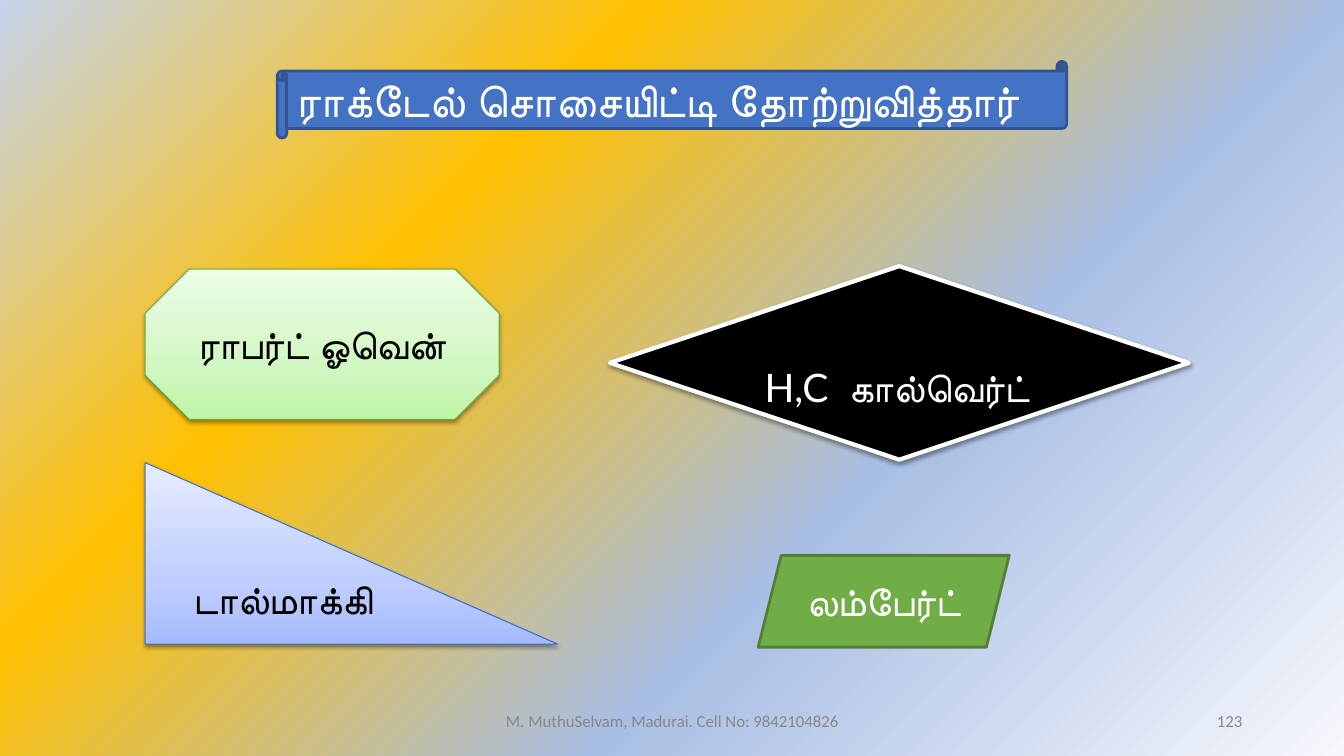
from lxml.etree import SubElement
from pptx import Presentation
from pptx.dml.color import RGBColor
from pptx.enum.shapes import MSO_SHAPE
from pptx.enum.text import MSO_ANCHOR, PP_ALIGN
from pptx.oxml.ns import qn
from pptx.util import Inches, Pt

COLORS = {
    "blue": "4472C4", "blue_edge": "325491", "green": "70AD47", "green_edge": "538035",
    "mint_edge": "6DAC43", "sky_edge": "3F6FC3",
    "black": "000000", "white": "FFFFFF", "grey": "888888",
}
BACKGROUND = [(0, "F5F7FC"), (36, "A9BEE4"), (69, "FFC000"), (100, "C5D3ED")]
MINT = [(0, "BEF5A7"), (35, "D1F7C2"), (100, "EDFDE7")]
SKY = [(0, "A6BBFF"), (35, "C0CEFF"), (100, "E7ECFF")]


def set_gradient(fill, owner, stops):
    """Give fill the stops and return its gradFill, still without a direction."""
    fill.gradient()
    grad = owner.find(".//" + qn("a:gradFill"))
    for child in list(grad):
        grad.remove(child)
    gs_list = SubElement(grad, qn("a:gsLst"))
    for pos, color in stops:
        gs = SubElement(gs_list, qn("a:gs"), pos=str(pos * 1000))
        SubElement(gs, qn("a:srgbClr"), val=color)
    return grad


def add_text(tf, text, size, font, color, align):
    tf.word_wrap = True
    tf.vertical_anchor = MSO_ANCHOR.MIDDLE
    p = tf.paragraphs[0]
    p.alignment = align
    r = p.add_run()
    r.text = text
    r.font.size = Pt(size)
    r.font.name = font
    r.font.color.rgb = RGBColor.from_string(COLORS[color])


prs = Presentation()
prs.slide_width, prs.slide_height = Inches(13.33), Inches(7.5)
s = prs.slides.add_slide(prs.slide_layouts[6])

grad = set_gradient(s.background.fill, s.element, BACKGROUND)
circle = SubElement(grad, qn("a:path"), path="circle")
SubElement(circle, qn("a:fillToRect"), l="100000", t="100000")

# preset, position, fill, line colour, line width, shadow, text, size, text colour, alignment, top inset
LEFT, CENTER, RIGHT = PP_ALIGN.LEFT, PP_ALIGN.CENTER, PP_ALIGN.RIGHT
shapes = [
    (MSO_SHAPE.HORIZONTAL_SCROLL, (2.75, 0.61, 7.83, 0.76), "blue", "blue_edge", 2, False,
     "ராக்டேல் சொசையிட்டி தோற்றுவித்தார் ", 32, "white", LEFT, 0.05),
    (MSO_SHAPE.OCTAGON, (1.44, 2.67, 3.51, 1.49), MINT, "mint_edge", 0.75, True,
     "ராபர்ட் ஓவென்", 28, "black", CENTER, 0.05),
    (MSO_SHAPE.DIAMOND, (6.05, 2.64, 5.74, 1.92), "black", "white", 3, True,
     "H,C  கால்வெர்ட் ", 28, "white", LEFT, 0.52),
    (MSO_SHAPE.RIGHT_TRIANGLE, (1.44, 4.59, 4.09, 1.8), SKY, "sky_edge", 0.75, True,
     "டால்மாக்கி ", 28, "black", CENTER, 0.05),
    (MSO_SHAPE.PARALLELOGRAM, (7.52, 5.51, 2.49, 0.91), "green", "green_edge", 2, False,
     "லம்பேர்ட்", 28, "white", CENTER, 0.05),
]
for preset, box, fill, edge, width, shadow, text, size, color, align, top in shapes:
    sp = s.shapes.add_shape(preset, *map(Inches, box))
    if isinstance(fill, list):
        grad = set_gradient(sp.fill, sp.element, fill)
        SubElement(grad, qn("a:lin"), ang="16200000", scaled="0")
    else:
        sp.fill.solid()
        sp.fill.fore_color.rgb = RGBColor.from_string(COLORS[fill])
    sp.line.color.rgb = RGBColor.from_string(COLORS[edge])
    sp.line.width = Pt(width)
    sp.shadow.inherit = False
    if shadow:
        effects = sp.element.spPr.find(qn("a:effectLst"))
        outer = SubElement(effects, qn("a:outerShdw"), blurRad=str(Pt(3.1)), dist=str(Pt(1.6)),
                           dir="5400000", rotWithShape="0")
        tint = SubElement(outer, qn("a:srgbClr"), val=COLORS["black"])
        SubElement(tint, qn("a:alpha"), val="38000")
    sp.text_frame.margin_top = Inches(top)
    add_text(sp.text_frame, text, size, "Lato", color, align)

footers = [
    (4.42, 4.5, "M. MuthuSelvam, Madurai. Cell No: 9842104826", CENTER),
    (9.42, 3, "123", RIGHT),
]
for left, width, text, align in footers:
    tb = s.shapes.add_textbox(Inches(left), Inches(6.95), Inches(width), Inches(0.4))
    add_text(tb.text_frame, text, 12, "Calibri", "grey", align)

prs.save("out.pptx")
